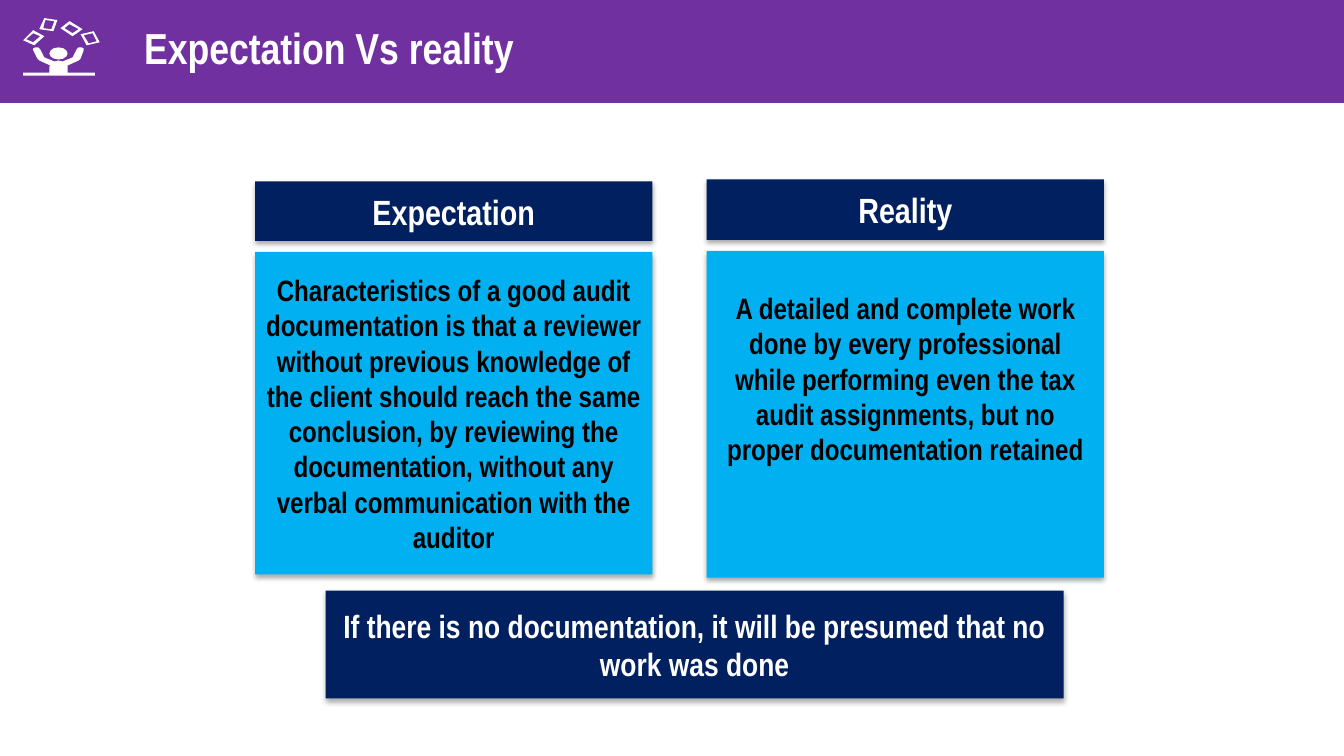
import pptx
import pptx.util
import pptx.dml.color
import pptx.enum.shapes
import pptx.enum.text
import pptx.oxml
import pptx.oxml.ns

Inches = pptx.util.Inches
Pt = pptx.util.Pt
SHAPE = pptx.enum.shapes.MSO_SHAPE
ALIGN = pptx.enum.text.PP_ALIGN
FONT = "Arial Narrow"
PURPLE, NAVY, SKY = "7030A0", "002060", "00B0F0"
WHITE, BLACK = "FFFFFF", "000000"

CARDS = [
    [(33, 30), (44, 36), (34, 45), (23, 40)],
    [(33, 33), (26, 39), (33, 42), (40, 36)],
    [(69, 21), (60, 28), (72, 36), (82, 29)],
    [(69, 24), (78, 29), (72, 33), (64, 28)],
    [(57, 20), (44, 18), (39, 29), (53, 31)],
    [(54, 21), (51, 29), (43, 28), (45, 20)],
    [(93, 31), (99, 42), (86, 45), (80, 34)],
    [(92, 33), (83, 35), (88, 43), (96, 41)],
]
BODY = [
    (58, 60), (54, 61), (44, 57), (40, 49), (38, 47), (35, 47), (33, 48),
    (33, 50), (37, 58), (39, 60), (50, 65), (49, 66), (49, 72), (23, 72),
    (23, 75), (94, 75), (94, 72), (67, 72), (67, 65), (78, 60), (80, 58),
    (83, 50), (83, 48), (81, 47), (78, 47), (76, 49), (72, 57), (62, 61),
]


def color(code):
    return pptx.dml.color.RGBColor.from_string(code)


def paint(shape, fill):
    shape.shadow.inherit = False
    shape.fill.solid()
    shape.fill.fore_color.rgb = color(fill)
    shape.line.fill.background()


def block(slide, kind, place, fill):
    shape = slide.shapes.add_shape(kind, *[Inches(n) for n in place])
    paint(shape, fill)
    return shape


def shade(shape):
    ns = pptx.oxml.ns
    shadow = pptx.oxml.parse_xml(
        f'<a:outerShdw {ns.nsdecls("a")} blurRad="{Pt(3.5)}" dist="{Pt(2.2)}" '
        'dir="5400000" rotWithShape="0"><a:srgbClr val="000000">'
        '<a:alpha val="32000"/></a:srgbClr></a:outerShdw>')
    shape._element.spPr.find(ns.qn("a:effectLst")).append(shadow)


def write(shape, text, size, ink, align=ALIGN.CENTER):
    frame = shape.text_frame
    frame.word_wrap = True
    frame.vertical_anchor = pptx.enum.text.MSO_ANCHOR.MIDDLE
    par = frame.paragraphs[0]
    par.text = text
    par.alignment = align
    font = par.font
    font.name, font.size, font.bold = FONT, Pt(size), True
    font.color.rgb = color(ink)
    return frame


def panel(slide, place, fill, text, size, ink):
    shape = block(slide, SHAPE.RECTANGLE, place, fill)
    shade(shape)
    return write(shape, text, size, ink)


def banner(slide, text):
    bar = block(slide, SHAPE.RECTANGLE, (-0.04, -0.08, 13.37, 1.11), PURPLE)
    bar.line.color.rgb = color(WHITE)
    bar.line.width = Pt(0.5)
    frame = write(bar, text, 31, WHITE, ALIGN.LEFT)
    frame.margin_left, frame.margin_bottom = Inches(1.47), Inches(0.07)


def outline(slide, loops):
    first, *rest = loops
    build = slide.shapes.build_freeform(*first[0], scale=Inches(0.01))
    build.add_line_segments(first[1:], close=True)
    for loop in rest:
        build.move_to(*loop[0])
        build.add_line_segments(loop[1:], close=True)
    paint(build.convert_to_shape(), WHITE)


def juggler(slide):
    outline(slide, CARDS)
    outline(slide, [BODY])
    block(slide, SHAPE.OVAL, (0.49, 0.47, 0.18, 0.12), WHITE)


def main():
    deck = pptx.Presentation()
    deck.slide_width, deck.slide_height = Inches(13.33), Inches(7.5)
    slide = deck.slides.add_slide(deck.slide_layouts[6])
    banner(slide, "Expectation Vs reality")
    juggler(slide)
    panel(slide, (3.23, 5.86, 7.32, 1.07), NAVY,
          "If there is no documentation, it will be presumed that no work was done",
          23, WHITE)
    panel(slide, (2.53, 2.5, 3.94, 3.2), SKY,
          "Characteristics of a good audit documentation is that a reviewer "
          "without previous knowledge of the client should reach the same "
          "conclusion, by reviewing the documentation, without any verbal "
          "communication with the auditor", 21, BLACK)
    panel(slide, (2.53, 1.8, 3.94, 0.59), NAVY, "Expectation", 25, WHITE)
    real = panel(slide, (7.01, 2.49, 3.94, 3.24), SKY,
                 "A detailed and complete work done by every professional while "
                 "performing even the tax audit assignments, but no proper "
                 "documentation retained", 21, BLACK)
    real.margin_bottom = Inches(0.76)
    panel(slide, (7.01, 1.78, 3.94, 0.6), NAVY, "Reality", 25, WHITE)
    deck.save("out.pptx")


if __name__ == "__main__":
    main()
